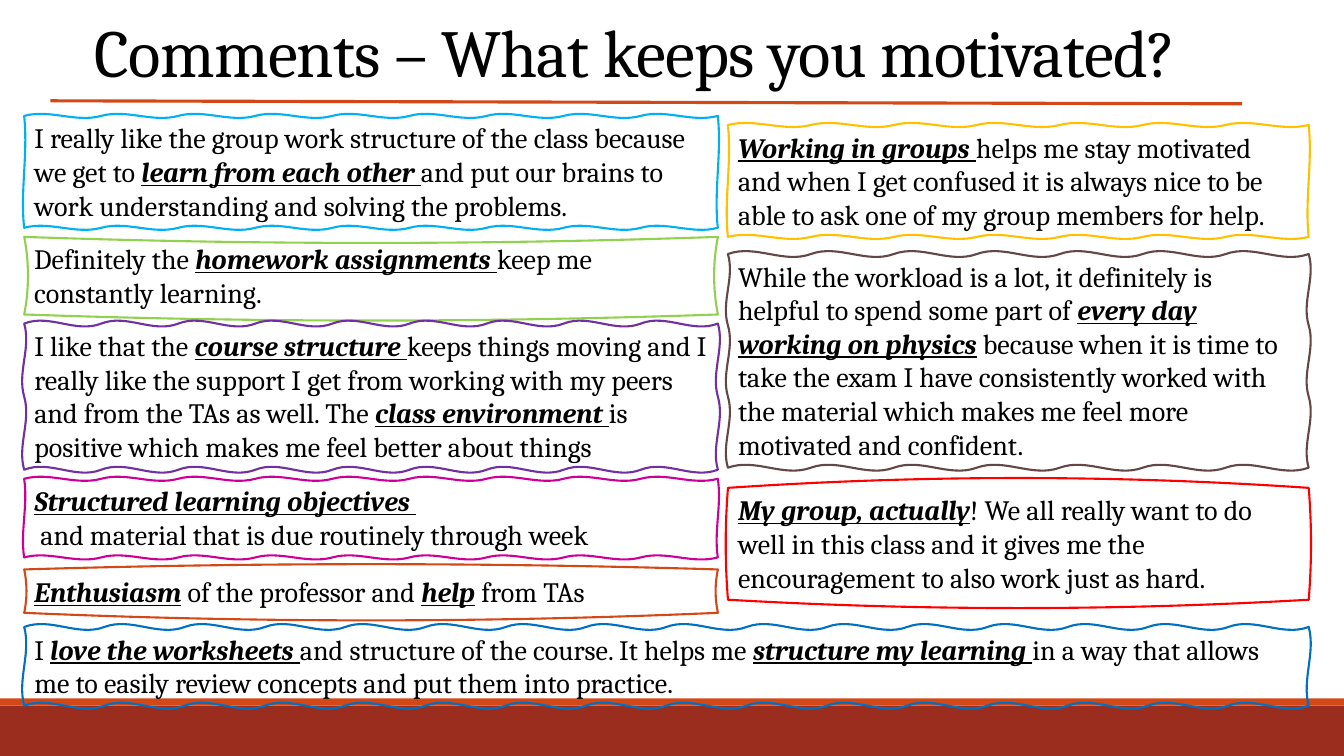
from math import hypot

from lxml.etree import SubElement
from pptx import Presentation
from pptx.dml.color import RGBColor
from pptx.enum.shapes import MSO_CONNECTOR as Connector, MSO_SHAPE as Shape
from pptx.enum.text import MSO_ANCHOR as Anchor, PP_ALIGN as Align
from pptx.oxml.ns import qn
from pptx.util import Inches, Pt

WIDTH, HEIGHT = 13.33, 7.5
FONT = "Cambria"

# Grid columns: left edge and width
LEFT, RIGHT, FULL = (0.24, 6.88), (7.22, 5.76), (0.24, 12.74)

# Outward pull of the curve handles on the top, side and bottom edges
WAVY = (0.07, 0.04, 0.07)
ROUGH = (0.1, 0.07, 0.1)

# Frame colour, column, top, height, pull, bowed edges, text with *emphasis*
COMMENTS = [
    ("00B0F0", LEFT, 1.15, 1.11, WAVY, False,
     ["I really like the group work structure of the class because we get to "
      "*learn from each other *and put our brains to work understanding and "
      "solving the problems."]),
    ("92D050", LEFT, 2.35, 0.77, (-0.08, -0.05, 0.08), True,
     ["Definitely the *homework assignments *keep me constantly learning."]),
    ("7030A0", LEFT, 3.21, 1.45, ROUGH, False,
     ["I like that the *course structure *keeps things moving and I really "
      "like the support I get from working with my peers and from the TAs as "
      "well. The *class environment *is positive which makes me feel better "
      "about things"]),
    ("FFC000", RIGHT, 1.24, 1.11, WAVY, False,
     ["*Working in groups *helps me stay motivated and when I get confused it "
      "is always nice to be able to ask one of my group members for help."]),
    ("644646", RIGHT, 2.52, 2.12, ROUGH, False,
     ["While the workload is a lot, it definitely is helpful to spend some "
      "part of *every day working on physics* because when it is time to take "
      "the exam I have consistently worked with the material which makes me "
      "feel more motivated and confident."]),
    ("FF0000", RIGHT, 4.84, 1.11, (0.13, 0.03, 0.11), True,
     ["*My group, actually*! We all really want to do well in this class and "
      "it gives me the encouragement to also work just as hard."]),
    ("D34817", LEFT, 5.65, 0.43, (0.07, -0.03, 0.1), True,
     ["*Enthusiasm* of the professor and *help* from TAs"]),
    ("0070C0", FULL, 6.22, 0.78, ROUGH, False,
     ["I *love the worksheets *and structure of the course. It helps me "
      "*structure my learning *in a way that allows me to easily review "
      "concepts and put them into practice."]),
    ("CC0099", LEFT, 4.75, 0.78, WAVY, False,
     ["*Structured learning objectives *",
      " and material that is due routinely through week"]),
]


def color(hex_code):
    return RGBColor.from_string(hex_code)


def add_text(paragraph, text, size=20, emphasis=False, spacing=0):
    run = paragraph.add_run()
    run.text = text
    run.font.name, run.font.size = FONT, Pt(size)
    run.font.color.rgb = color("000000")
    if emphasis:
        run.font.bold = run.font.italic = run.font.underline = True
    if spacing:
        run.font._element.set("spc", str(int(spacing * 100)))


presentation = Presentation()
presentation.slide_width, presentation.slide_height = Inches(WIDTH), Inches(HEIGHT)
slide = presentation.slides.add_slide(presentation.slide_layouts[5])
shapes = slide.shapes

# Footer bands
for top, height, fill in [(7, 0.5, "9B2D1F"), (6.93, 0.07, "D34817")]:
    band = shapes.add_shape(Shape.RECTANGLE, 0, Inches(top), Inches(WIDTH), Inches(height))
    band.shadow.inherit = False
    band.fill.solid()
    band.fill.fore_color.rgb = color(fill)
    band.line.fill.background()

# Title and the rule below it
title = shapes.title
title.left, title.top, title.width, title.height = map(Inches, (0.55, 0.11, 11.5, 0.89))
title.text_frame.vertical_anchor = Anchor.MIDDLE
title.text_frame.word_wrap = True
heading = title.text_frame.paragraphs[0]
heading.alignment, heading.line_spacing = Align.CENTER, 0.9
add_text(heading, "Comments – What keeps you motivated?", size=48, spacing=-0.5)

rule = shapes.add_connector(Connector.STRAIGHT, *map(Inches, (0.5, 1, 12.32, 1.03)))
rule.line.color.rgb, rule.line.width = color("D34817"), Pt(2.25)
SubElement(rule._element.spPr, qn("a:effectLst"))

# Comments in hand-drawn frames
for line_color, (left, width), top, height, pull, bowed, paragraphs in COMMENTS:
    right, bottom = left + width, top + height
    corners = [(left, top), (right, top), (right, bottom), (left, bottom)]
    top_pull, side_pull, bottom_pull = pull

    # Each wave is one curve: two handles and an end point
    points = []
    for index, side in enumerate((top_pull, side_pull, bottom_pull, side_pull)):
        (x1, y1), (x2, y2) = corners[index], corners[(index + 1) % 4]
        length = hypot(x2 - x1, y2 - y1)
        across, down = (x2 - x1) / length, (y2 - y1) / length
        waves = 1 if bowed else max(1, round(length / 0.8))
        for wave in range(waves):
            for third, offset in [(1, side), (2, side if bowed else -side), (3, 0)]:
                along = length * (wave + third / 3) / waves
                points.append((Inches(x1 + across * along + down * offset),
                               Inches(y1 + down * along - across * offset)))
    builder = shapes.build_freeform(Inches(left), Inches(top))
    builder.add_line_segments(points, close=True)
    frame = builder.convert_to_shape()
    segments = list(frame._element.iter(qn("a:lnTo")))
    for first, second, end in zip(segments[::3], segments[1::3], segments[2::3]):
        first.tag = qn("a:cubicBezTo")
        for segment in (second, end):
            first.append(segment[0])
            segment.getparent().remove(segment)
    frame.shadow.inherit = False
    frame.fill.background()
    frame.line.color.rgb, frame.line.width = color(line_color), Pt(1.5)

    # Margins run from the straight box, whatever the swing of the edges
    text_frame = frame.text_frame
    text_frame.word_wrap, text_frame.vertical_anchor = True, Anchor.TOP
    text_frame.margin_left = Inches(left + 0.1) - frame.left
    text_frame.margin_right = frame.left + frame.width - Inches(right - 0.1)
    text_frame.margin_top = Inches(top + 0.05) - frame.top
    text_frame.margin_bottom = 0
    for number, text in enumerate(paragraphs):
        paragraph = text_frame.add_paragraph() if number else text_frame.paragraphs[0]
        paragraph.alignment = Align.LEFT
        for part, words in enumerate(text.split("*")):
            if words:
                add_text(paragraph, words, emphasis=part % 2 == 1)

presentation.save("out.pptx")
